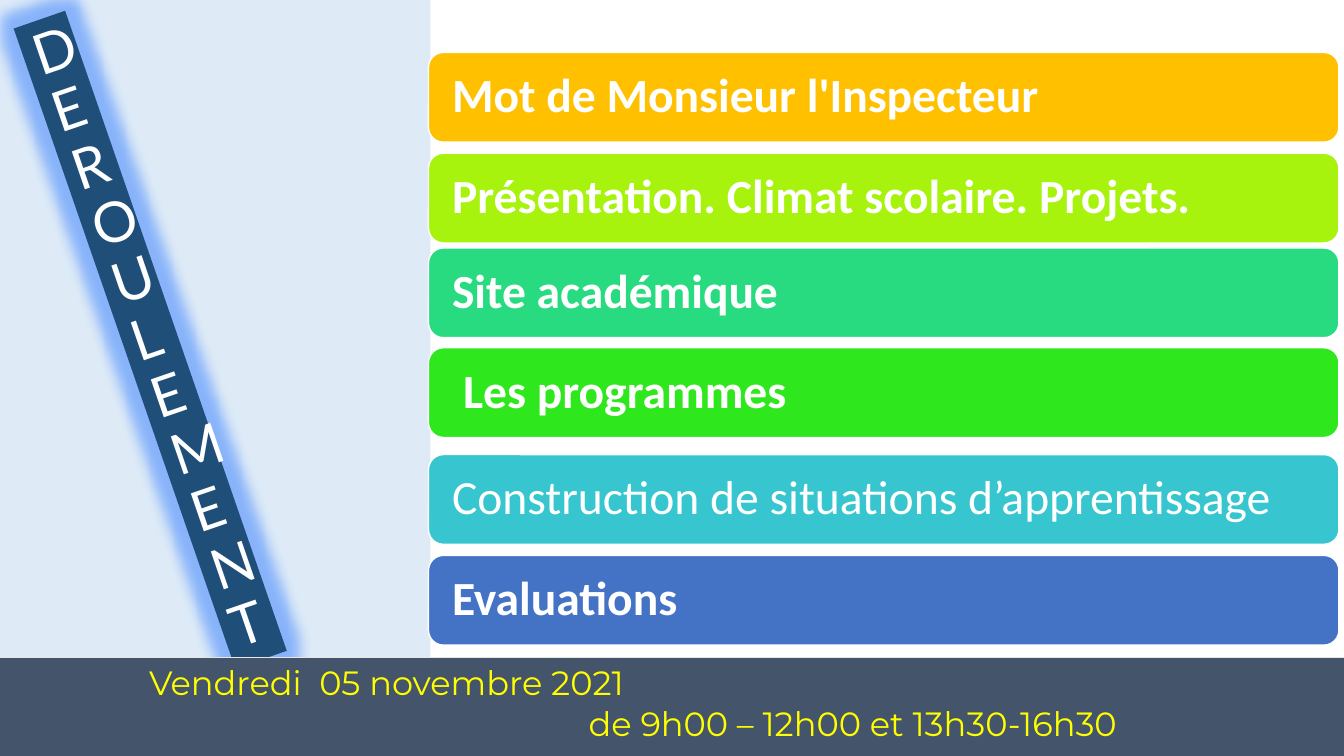
import pptx
import pptx.dml.color
import pptx.enum.shapes
import pptx.enum.text
import pptx.oxml
import pptx.oxml.ns
import pptx.util

PX = 9144
SHAPES = pptx.enum.shapes.MSO_SHAPE
ANCHOR = pptx.enum.text.MSO_ANCHOR
ALIGN = pptx.enum.text.PP_ALIGN


def color(code):
    return pptx.dml.color.RGBColor.from_string(code)


def effects(shape, content=""):
    namespace = pptx.oxml.ns.nsdecls("a")
    shape.element.spPr.append(
        pptx.oxml.parse_xml(f"<a:effectLst {namespace}>{content}</a:effectLst>"))


class AgendaSlide:
    white = "FFFFFF"
    navy = "1F4E79"
    glow = ('<a:glow rad="228600"><a:srgbClr val="2070FF">'
            '<a:alpha val="45000"/></a:srgbClr></a:glow>')

    def __init__(self, deck):
        self.slide = deck.slides.add_slide(deck.slide_layouts[5])

    def style(self, para, font, size, code, bold=False, spacing=None):
        para.font.name = font
        para.font.size = pptx.util.Pt(size)
        para.font.bold = bold
        para.font.color.rgb = color(code)
        para.alignment = ALIGN.LEFT
        para.line_spacing = spacing

    def block(self, preset, left, top, width, height, fill, line=None):
        shape = self.slide.shapes.add_shape(
            preset, left * PX, top * PX, width * PX, height * PX)
        shape.shadow.inherit = False
        shape.fill.solid()
        shape.fill.fore_color.rgb = color(fill)
        if line:
            shape.line.color.rgb = color(line)
            shape.line.width = pptx.util.Pt(1)
        else:
            shape.line.fill.background()
        return shape

    def panel(self, left, top, width, height, fill):
        return self.block(SHAPES.RECTANGLE, left, top, width, height, fill)

    def title(self, text, left, top, width, height, angle):
        title = self.slide.shapes.title
        title.left, title.top = left * PX, top * PX
        title.width, title.height = width * PX, height * PX
        title.rotation = angle
        title.fill.solid()
        title.fill.fore_color.rgb = color(self.navy)
        effects(title, self.glow)
        frame = title.text_frame
        frame.text = text
        frame.word_wrap = True
        frame.auto_size = pptx.enum.text.MSO_AUTO_SIZE.NONE
        frame.vertical_anchor = ANCHOR.MIDDLE
        self.style(frame.paragraphs[0], "Lato", 40, self.white, spacing=0.9)
        return title

    def rule(self, left, top, right, code):
        line = self.slide.shapes.add_connector(
            pptx.enum.shapes.MSO_CONNECTOR.STRAIGHT,
            left * PX, top * PX, right * PX, top * PX)
        line.line.color.rgb = color(code)
        line.line.width = pptx.util.Pt(0.75)
        effects(line)

    def bar(self, text, top, fill, bold=True, inset=19):
        bar = self.block(SHAPES.ROUNDED_RECTANGLE, 425, top, 903, 89, fill, self.white)
        frame = bar.text_frame
        frame.text = text
        frame.word_wrap = True
        frame.vertical_anchor = ANCHOR.MIDDLE
        frame.margin_left = inset * PX
        self.style(frame.paragraphs[0], "Calibri", 34, self.white, bold, 0.9)

    def schedule(self, lines, left, top, width, height):
        box = self.slide.shapes.add_textbox(left * PX, top * PX, width * PX, height * PX)
        frame = box.text_frame
        frame.word_wrap = True
        for index, (text, indent) in enumerate(lines):
            para = frame.add_paragraph() if index else frame.paragraphs[0]
            para.text = text
            self.style(para, "Montserrat", 24, "FFFF00")
            para._p.get_or_add_pPr().set("marL", str(indent * PX))


def main():
    deck = pptx.Presentation()
    deck.slide_width, deck.slide_height = 1333 * PX, 750 * PX
    page = AgendaSlide(deck)

    side = page.panel(0, 0, 427, 750, "DEEBF7")
    title = page.title("DEROULEMENT", 122, 1, 54, 672, 340.9)
    title.element.addprevious(side.element)
    page.panel(0, 652, 1333, 98, "44546A")
    page.rule(0, 652, 1333, "E7E6E6")

    page.bar("Mot de Monsieur l'Inspecteur", 52, "FFC000")
    page.bar("Présentation. Climat scolaire. Projets.", 152, "A7F30E")
    page.bar("Site académique", 246, "29DB80")
    page.bar("Les programmes", 345, "2EE71C", inset=30)
    page.bar("Construction de situations d’apprentissage", 451, "37C6CF", bold=False)
    page.bar("Evaluations", 551, "4472C4")

    page.schedule([("Vendredi  05 novembre 2021", 0),
                   ("de 9h00 – 12h00 et 13h30-16h30", 436)], 138, 652, 1077, 91)
    deck.save("out.pptx")


if __name__ == "__main__":
    main()
